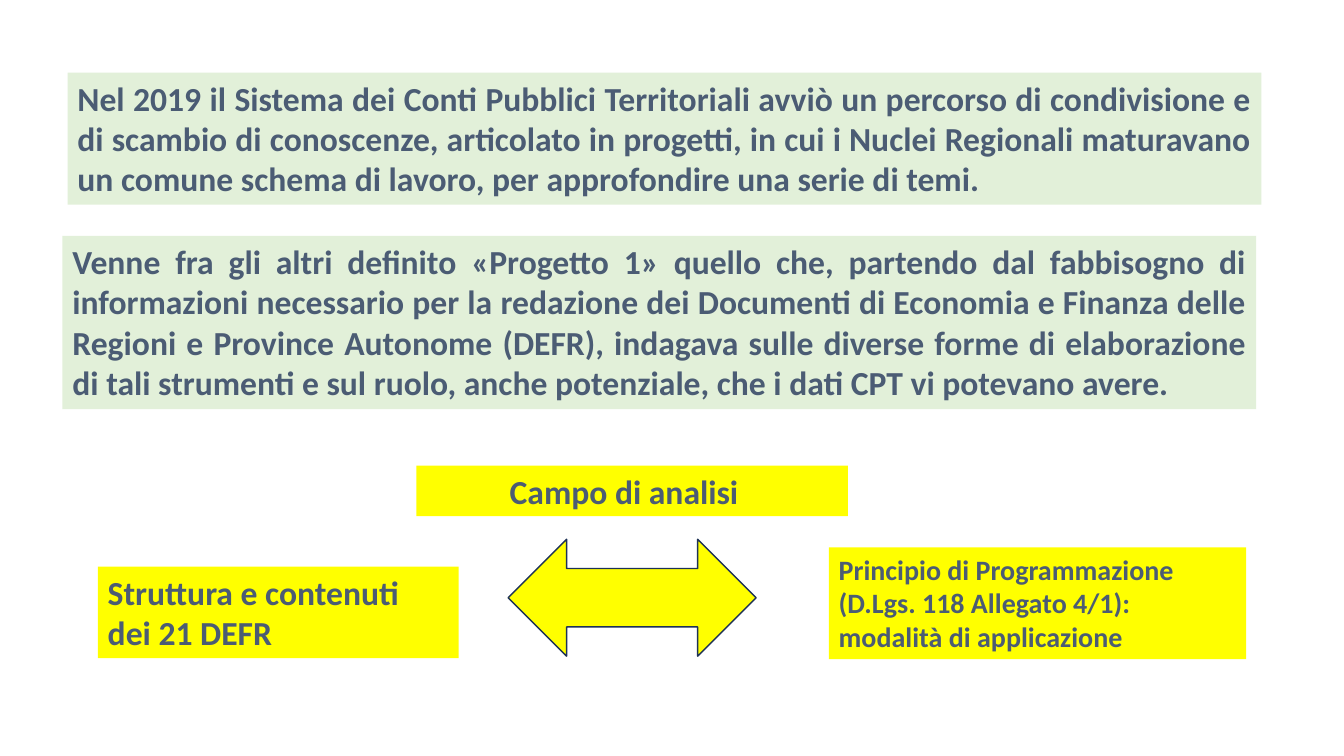
from pptx import Presentation
from pptx import util as u
from pptx.dml.color import RGBColor
from pptx.enum import shapes, text

PX = 9144
COLORS = {"green": "E2F0D9", "yellow": "FFFF00", "text": "4B5C74", "outline": "1E3256"}
LEFT, CENTER, JUSTIFY = text.PP_ALIGN.LEFT, text.PP_ALIGN.CENTER, text.PP_ALIGN.JUSTIFY

BOXES = [
    ("Nel 2019 il Sistema dei Conti Pubblici Territoriali avviò un percorso di condivisione e "
     "di scambio di conoscenze, articolato in progetti, in cui i Nuclei Regionali maturavano "
     "un comune schema di lavoro, per approfondire una serie di temi.",
     (67, 72, 1184, 131), dict(fill="green", align=JUSTIFY)),
    ("Venne fra gli altri definito «Progetto 1» quello che, partendo dal fabbisogno di "
     "informazioni necessario per la redazione dei Documenti di Economia e Finanza delle "
     "Regioni e Province Autonome (DEFR), indagava sulle diverse forme di elaborazione "
     "di tali strumenti e sul ruolo, anche potenziale, che i dati CPT vi potevano avere.",
     (62, 234, 1184, 172), dict(fill="green", align=JUSTIFY)),
    ("Principio di Programmazione (D.Lgs. 118 Allegato 4/1): modalità di applicazione",
     (822, 543, 414, 111), dict(size=20)),
    ("Campo di analisi", (413, 462, 428, 50), dict(align=CENTER, right_inset=26)),
    ("Struttura e contenuti dei 21 DEFR", (97, 562, 358, 91), {}),
]
ARROW = (504, 535, 246, 116)


def color(name):
    return RGBColor.from_string(COLORS[name])


def px(lengths):
    return [length * PX for length in lengths]


def add_text(slide, wording, place, fill="yellow", size=24, align=LEFT, right_inset=10):
    shape = slide.shapes.add_textbox(*px(place))
    shape.fill.solid()
    shape.fill.fore_color.rgb = color(fill)
    frame = shape.text_frame
    frame.word_wrap = True
    frame.auto_size = text.MSO_AUTO_SIZE.SHAPE_TO_FIT_TEXT
    frame.margin_right = right_inset * PX
    paragraph = frame.paragraphs[0]
    paragraph.alignment = align
    run = paragraph.add_run()
    run.text = wording
    run.font.name = "Calibri"
    run.font.size = u.Pt(size)
    run.font.bold = True
    run.font.color.rgb = color("text")


def add_arrow(slide, place):
    shape = slide.shapes.add_shape(shapes.MSO_SHAPE.LEFT_RIGHT_ARROW, *px(place))
    shape.shadow.inherit = False
    shape.fill.solid()
    shape.fill.fore_color.rgb = color("yellow")
    shape.line.color.rgb = color("outline")
    shape.line.width = u.Pt(1)


def main():
    presentation = Presentation()
    presentation.slide_width, presentation.slide_height = px((1333, 750))
    slide = presentation.slides.add_slide(presentation.slide_layouts[6])
    for wording, place, style in BOXES:
        add_text(slide, wording, place, **style)
    add_arrow(slide, ARROW)
    presentation.save("out.pptx")


if __name__ == "__main__":
    main()
